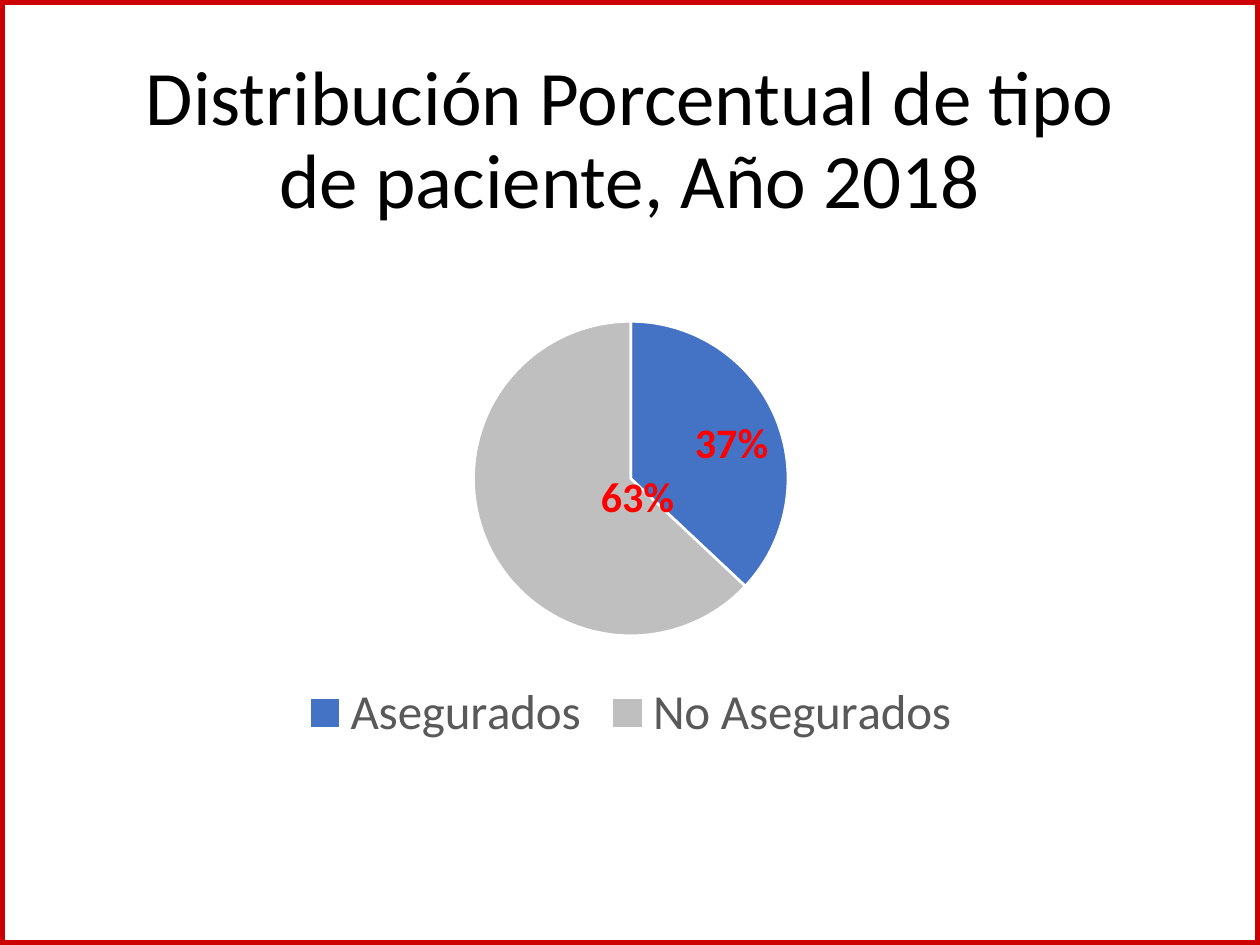
from lxml import etree
from pptx import Presentation
from pptx.chart.data import CategoryChartData
from pptx.dml.color import RGBColor
from pptx.enum.chart import XL_CHART_TYPE, XL_LABEL_POSITION, XL_LEGEND_POSITION
from pptx.enum.shapes import MSO_SHAPE
from pptx.enum.text import MSO_ANCHOR, PP_ALIGN
from pptx.oxml import parse_xml
from pptx.util import Pt

PIE = XL_CHART_TYPE.PIE
BOTTOM = XL_LEGEND_POSITION.BOTTOM
INSIDE_END = XL_LABEL_POSITION.INSIDE_END
RECTANGLE = MSO_SHAPE.RECTANGLE
MIDDLE = MSO_ANCHOR.MIDDLE
CENTER = PP_ALIGN.CENTER

WHITE = RGBColor(0xFF, 0xFF, 0xFF)
BLACK = RGBColor(0x00, 0x00, 0x00)
BORDER_RED = RGBColor(0xCC, 0x00, 0x00)
LABEL_RED = RGBColor(0xFF, 0x00, 0x00)
BLUE = RGBColor(0x44, 0x72, 0xC4)
SILVER = RGBColor(0xBF, 0xBF, 0xBF)
GRAY = RGBColor(0x59, 0x59, 0x59)
FONT = "Calibri"
C_NS = "http://schemas.openxmlformats.org/drawingml/2006/chart"


def set_font(font, size, color, bold=False):
    font.name = FONT
    font.size = Pt(size)
    font.bold = bold
    font.color.rgb = color


def manual_layout(**values):
    layout = parse_xml(f'<c:layout xmlns:c="{C_NS}"><c:manualLayout/></c:layout>')
    for name, val in values.items():
        etree.SubElement(layout[0], f"{{{C_NS}}}{name}", val=str(val))
    return layout


prs = Presentation()
prs.slide_width, prs.slide_height = Pt(720), Pt(540)
s = prs.slides.add_slide(prs.slide_layouts[5])

border = s.shapes.add_shape(RECTANGLE, 0, 0, prs.slide_width, prs.slide_height)
border.shadow.inherit = False
border.fill.solid()
border.fill.fore_color.rgb = WHITE
border.line.color.rgb = BORDER_RED
border.line.width = Pt(6)
s.shapes.title.element.addprevious(border.element)

title = s.shapes.title
title.left, title.top, title.width, title.height = Pt(49.5), Pt(28.8), Pt(621), Pt(104.4)
tf = title.text_frame
tf.word_wrap = True
tf.vertical_anchor = MIDDLE
p = tf.paragraphs[0]
p.alignment = CENTER
p.line_spacing = 0.9
r = p.add_run()
r.text = "Distribución Porcentual de tipo de paciente, Año 2018"
set_font(r.font, 44, BLACK)

data = CategoryChartData(number_format="0%")
data.categories = ["Asegurados", "No Asegurados"]
data.add_series("Series 1", [0.37, 0.63])
frame = s.shapes.add_chart(PIE, Pt(124), Pt(167), Pt(473), Pt(263), data)
chart = frame.chart
set_font(chart.font, 10, BLACK)
chart.has_title = False
chart.has_legend = True
chart.legend.position = BOTTOM
chart.legend.include_in_layout = False
set_font(chart.legend.font, 28, GRAY)

plot = chart.plots[0]
plot.vary_by_categories = True
series = plot.series[0]
for i, color in enumerate([BLUE, SILVER]):
    fmt = series.points[i].format
    fmt.fill.solid()
    fmt.fill.fore_color.rgb = color
    fmt.line.color.rgb = WHITE
    fmt.line.width = Pt(1.5)

labels = series.data_labels
labels.show_value = True
labels.show_percentage = False
labels.number_format = "0%"
labels.number_format_is_linked = False
labels.position = INSIDE_END
set_font(labels.font, 24, LABEL_RED, True)

label = series.points[1].data_label
set_font(label.font, 24, LABEL_RED, True)
label.position = INSIDE_END
idx = labels._element.find(f"{{{C_NS}}}dLbl")[0]
idx.addnext(parse_xml(f'<c:numFmt xmlns:c="{C_NS}" formatCode="0%" sourceLinked="0"/>'))
idx.addnext(manual_layout(x=0.13, y=-0.03))

plot_area = chart.element.chart.plotArea
for old in plot_area.findall(f"{{{C_NS}}}layout"):
    plot_area.remove(old)
plot_area.insert(0, manual_layout(layoutTarget="inner", xMode="edge", yMode="edge",
                                  x=0.31, y=0.06, w=0.38, h=0.69))

prs.save("out.pptx")
